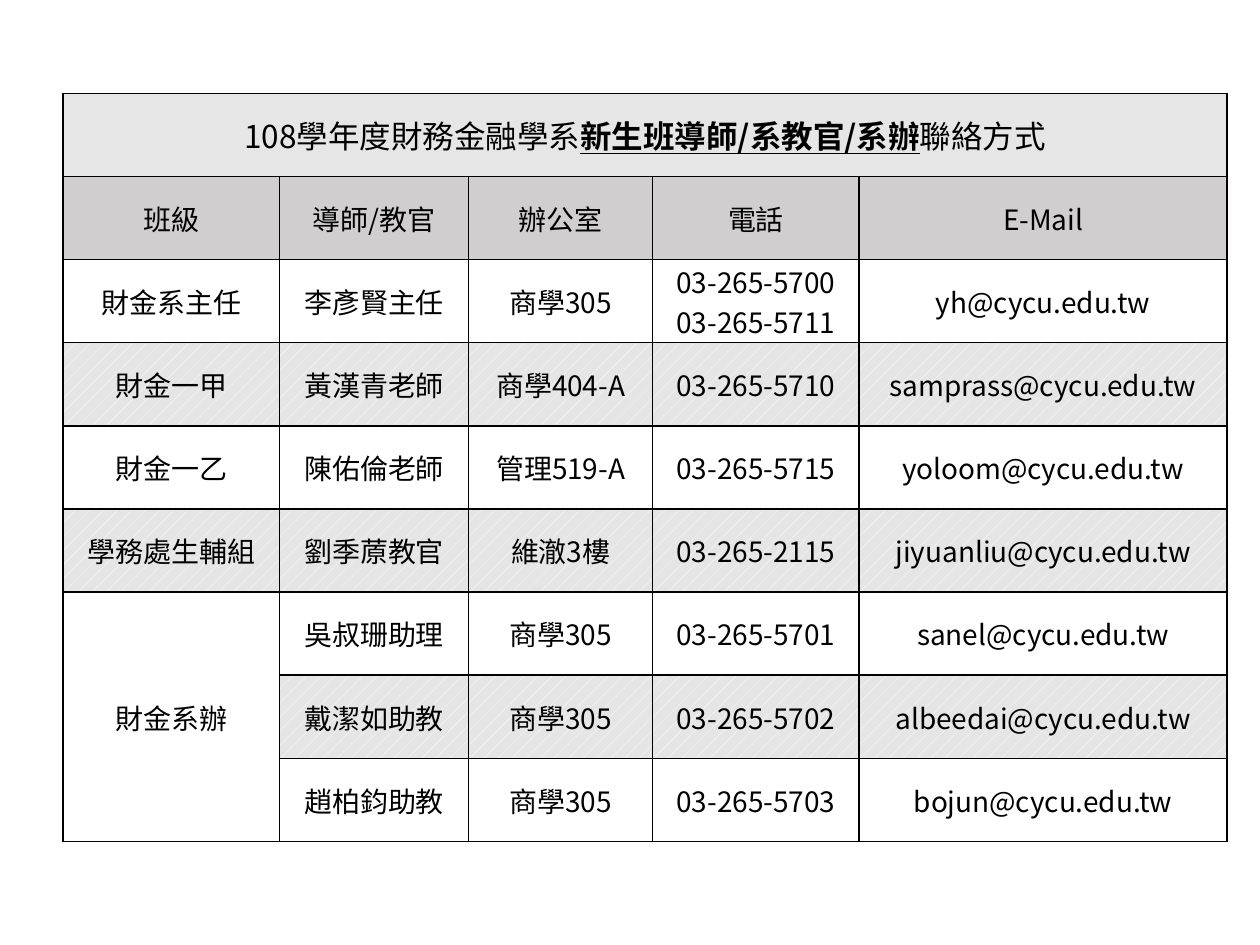
from typing import NamedTuple

from pptx import Presentation
from pptx.dml.color import RGBColor
from pptx.enum.dml import MSO_PATTERN
from pptx.enum.text import MSO_ANCHOR, PP_ALIGN
from pptx.oxml import parse_xml
from pptx.oxml.ns import nsdecls, qn
from pptx.oxml.xmlchemy import OxmlElement
from pptx.table import _Cell as Cell
from pptx.text.text import _Paragraph as Paragraph
from pptx.util import Inches, Pt

FONT = "Noto Sans CJK SC"
BLACK = RGBColor(0x00, 0x00, 0x00)
WHITE = RGBColor(0xFF, 0xFF, 0xFF)
TITLE_GRAY = RGBColor(0xE7, 0xE6, 0xE6)
HEADER_GRAY = RGBColor(0xD0, 0xCE, 0xCE)
BAND_GRAY = RGBColor(0xE5, 0xE5, 0xE5)

COLUMN_WIDTHS = (1.72, 1.5, 1.46, 1.64, 2.92)
ROW_HEIGHT = 0.66
HEADINGS = ("班級", "導師/教官", "辦公室", "電話", "E-Mail")
FIRST_CONTACT_ROW = 2
OFFICE_ROW = 6


class Contact(NamedTuple):
    group: str
    person: str
    room: str
    phone: str
    email: str


CONTACTS = (
    Contact("財金系主任", "李彥賢主任", "商學305", "03-265-5700\n03-265-5711", "yh@cycu.edu.tw"),
    Contact("財金一甲", "黃漢青老師", "商學404-A", "03-265-5710", "samprass@cycu.edu.tw"),
    Contact("財金一乙", "陳佑倫老師", "管理519-A", "03-265-5715", "yoloom@cycu.edu.tw"),
    Contact("學務處生輔組", "劉季蒝教官", "維澈3樓", "03-265-2115", "jiyuanliu@cycu.edu.tw"),
    Contact("財金系辦", "吳叔珊助理", "商學305", "03-265-5701", "sanel@cycu.edu.tw"),
    Contact("", "戴潔如助教", "商學305", "03-265-5702", "albeedai@cycu.edu.tw"),
    Contact("", "趙柏鈞助教", "商學305", "03-265-5703", "bojun@cycu.edu.tw"),
)


def add_borders(cell: Cell) -> None:
    """Draw a 1 pt black line on all four sides; lines must precede the fill."""
    properties = cell._tc.get_or_add_tcPr()
    for position, side in enumerate(("lnL", "lnR", "lnT", "lnB")):
        properties.insert(position, parse_xml(
            f'<a:{side} {nsdecls("a")} w="{Pt(1)}"><a:solidFill>'
            f'<a:srgbClr val="{BLACK}"/></a:solidFill></a:{side}>'))


def format_paragraph(paragraph: Paragraph, size: int) -> None:
    paragraph.alignment = PP_ALIGN.CENTER
    font = paragraph.font
    font.size, font.name = Pt(size), FONT
    font.color.rgb = BLACK
    # The same typeface for Chinese characters
    east_asian = OxmlElement("a:ea")
    east_asian.set("typeface", FONT)
    paragraph._p.pPr.find(qn("a:defRPr")).append(east_asian)


def format_cell(cell: Cell, size: int = 16) -> None:
    cell.vertical_anchor = MSO_ANCHOR.MIDDLE
    cell.margin_left = cell.margin_right = Inches(0.07)
    cell.margin_top = cell.margin_bottom = 0
    for paragraph in cell.text_frame.paragraphs:
        format_paragraph(paragraph, size)
    add_borders(cell)


def fill_solid(cell: Cell, color: RGBColor) -> None:
    cell.fill.solid()
    cell.fill.fore_color.rgb = color


def fill_band(cell: Cell) -> None:
    cell.fill.patterned()
    cell.fill.pattern = MSO_PATTERN.PERCENT_10
    cell.fill.fore_color.rgb = WHITE
    cell.fill.back_color.rgb = BAND_GRAY


def main() -> None:
    presentation = Presentation()
    presentation.slide_width, presentation.slide_height = Inches(10), Inches(7.5)
    slide = presentation.slides.add_slide(presentation.slide_layouts[6])

    # Table grid
    row_count = FIRST_CONTACT_ROW + len(CONTACTS)
    table = slide.shapes.add_table(
        row_count, len(COLUMN_WIDTHS), Inches(0.5), Inches(0.74),
        Inches(sum(COLUMN_WIDTHS)), Inches(ROW_HEIGHT * row_count)).table
    table.first_row = table.horz_banding = False
    for column, width in zip(table.columns, COLUMN_WIDTHS):
        column.width = Inches(width)
    for row in table.rows:
        row.height = Inches(ROW_HEIGHT)

    # Title row with an emphasised middle part
    title = table.cell(0, 0)
    title.merge(table.cell(0, len(COLUMN_WIDTHS) - 1))
    title_line = title.text_frame.paragraphs[0]
    for text, emphasised in (("108學年度財務金融學系", False),
                             ("新生班導師/系教官/系辦", True),
                             ("聯絡方式", False)):
        run = title_line.add_run()
        run.text = text
        run.font.bold = run.font.underline = emphasised
    for cell in table.rows[0].cells:
        fill_solid(cell, TITLE_GRAY)
        format_cell(cell, 18)

    # Column headings
    for cell, heading in zip(table.rows[1].cells, HEADINGS):
        cell.text = heading
        fill_solid(cell, HEADER_GRAY)
        format_cell(cell)

    # Contacts, every second row banded except under the merged office cell
    table.cell(OFFICE_ROW, 0).merge(table.cell(row_count - 1, 0))
    for index, contact in enumerate(CONTACTS):
        for cell, text in zip(table.rows[FIRST_CONTACT_ROW + index].cells, contact):
            cell.text = text
            if index % 2 and not cell.is_spanned:
                fill_band(cell)
            else:
                cell.fill.background()
            format_cell(cell)

    presentation.save("out.pptx")


if __name__ == "__main__":
    main()
